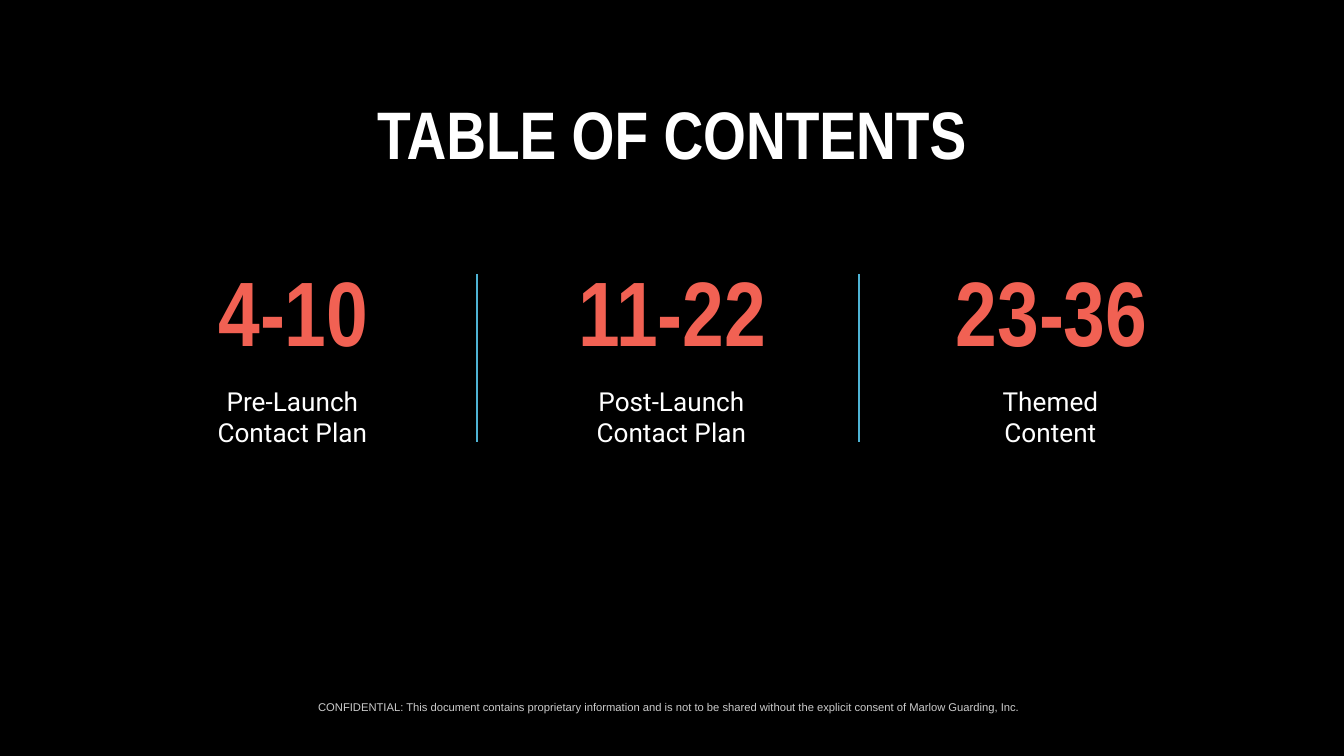
from dataclasses import dataclass

from pptx import Presentation
from pptx.dml.color import RGBColor
from pptx.enum.shapes import MSO_CONNECTOR
from pptx.enum.text import MSO_ANCHOR, PP_ALIGN
from pptx.oxml.ns import qn
from pptx.util import Emu, Pt
from lxml import etree

STRAIGHT = MSO_CONNECTOR.STRAIGHT
CENTER = PP_ALIGN.CENTER
TOP = MSO_ANCHOR.TOP
PX = 914400 / 134.4
INSET = 13
WIDTH, HEIGHT = 1344, 756
COLUMN_GAP = 379
DIVIDER_GAP = 382
SECTIONS = [
    ("4-10", ["Pre-Launch Contact Plan"]),
    ("11-22", ["Post-Launch Contact Plan"]),
    ("23-36", ["Themed", "Content"]),
]
NOTICE = (
    "CONFIDENTIAL: This document contains proprietary information and is not "
    "to be shared without the explicit consent of Marlow Guarding, Inc."
)


@dataclass(frozen=True)
class Theme:
    """Colours and text formats of the slide."""

    background: str = "000000"
    divider: str = "4EB3D4"
    divider_pt: float = 0.75
    title: tuple = ("Arial Narrow", 36, True, "FFFFFF")
    pages: tuple = ("Arial Narrow", 49, True, "F16153")
    label: tuple = ("Roboto", 14, False, "FFFFFF")
    notice: tuple = ("Arial", 6, False, "CCCCCC")


THEME = Theme()


def px(value):
    """Turn whole pixels into EMU."""
    return Emu(round(value * PX))


def add_text(slide, box, lines, style):
    """Add centred paragraphs in one text format."""
    tf = slide.shapes.add_textbox(*map(px, box)).text_frame
    frame = {"word_wrap": True, "vertical_anchor": TOP}
    frame.update({f"margin_{side}": px(INSET) for side in ("left", "top", "right", "bottom")})
    for key, value in frame.items():
        setattr(tf, key, value)
    name, size, bold, color = style
    for i, line in enumerate(lines):
        p = tf.paragraphs[0] if i == 0 else tf.add_paragraph()
        p.alignment = CENTER
        r = p.add_run()
        r.text = line
        for key, value in {"name": name, "size": Pt(size), "bold": bold}.items():
            setattr(r.font, key, value)
        r.font.color.rgb = RGBColor.from_string(color)


def add_divider(slide, x, top, bottom):
    """Add a vertical line between two columns."""
    line = slide.shapes.add_connector(STRAIGHT, px(x), px(top), px(x), px(bottom))
    line.line.width = Pt(THEME.divider_pt)
    line.line.color.rgb = RGBColor.from_string(THEME.divider)
    etree.SubElement(line._element.spPr, qn("a:effectLst"))


def main():
    """Build the contents slide."""
    prs = Presentation()
    prs.slide_width, prs.slide_height = px(WIDTH), px(HEIGHT)
    s = prs.slides.add_slide(prs.slide_layouts[6])
    fill = s.background.fill
    fill.solid()
    fill.fore_color.rgb = RGBColor.from_string(THEME.background)

    add_text(s, (0, 694, 1337, 43), [NOTICE], THEME.notice)
    add_text(s, (46, 79, 1252, 188), ["TABLE OF CONTENTS"], THEME.title)
    for i, (pages, label) in enumerate(SECTIONS):
        shift = i * COLUMN_GAP
        add_text(s, (155 + shift, 242, 277, 145), [pages], THEME.pages)
        add_text(s, (169 + shift, 372, 247, 133), label, THEME.label)
    for i in range(len(SECTIONS) - 1):
        add_divider(s, 477 + i * DIVIDER_GAP, 274, 442)
    prs.save("out.pptx")


if __name__ == "__main__":
    main()
